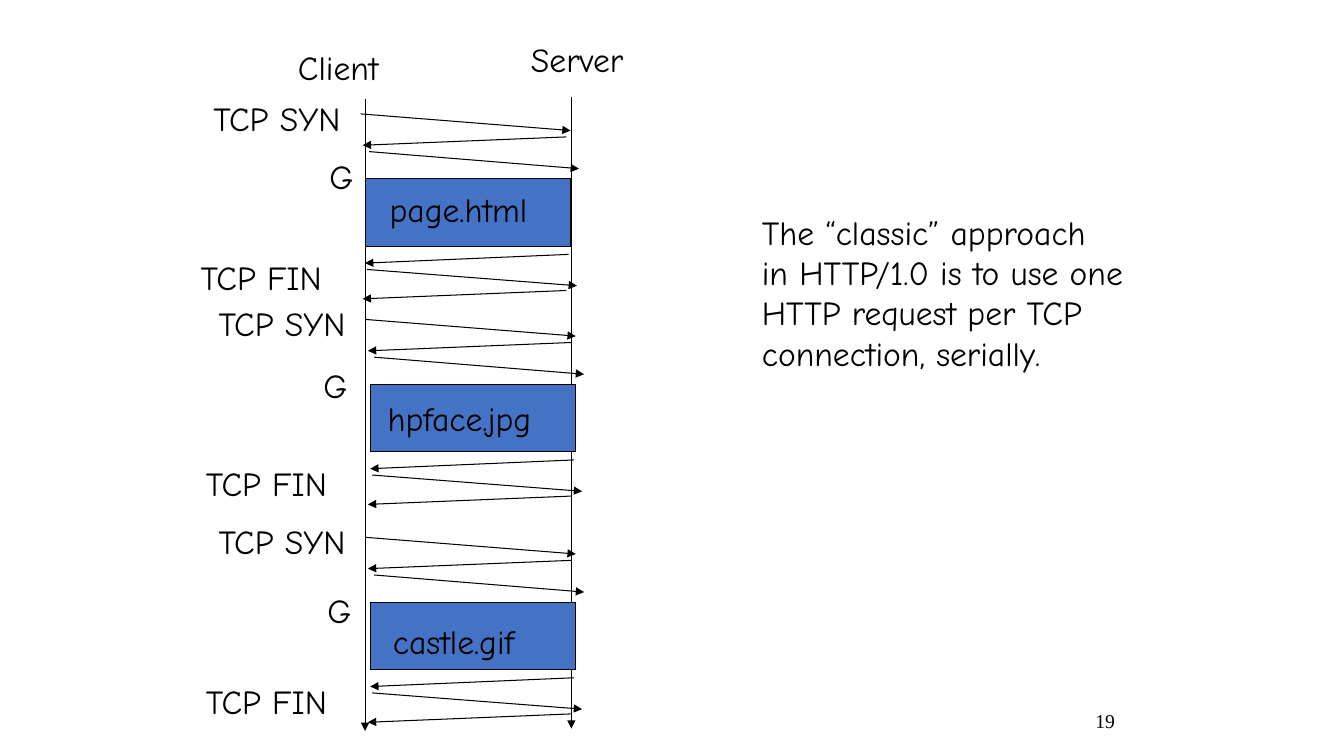
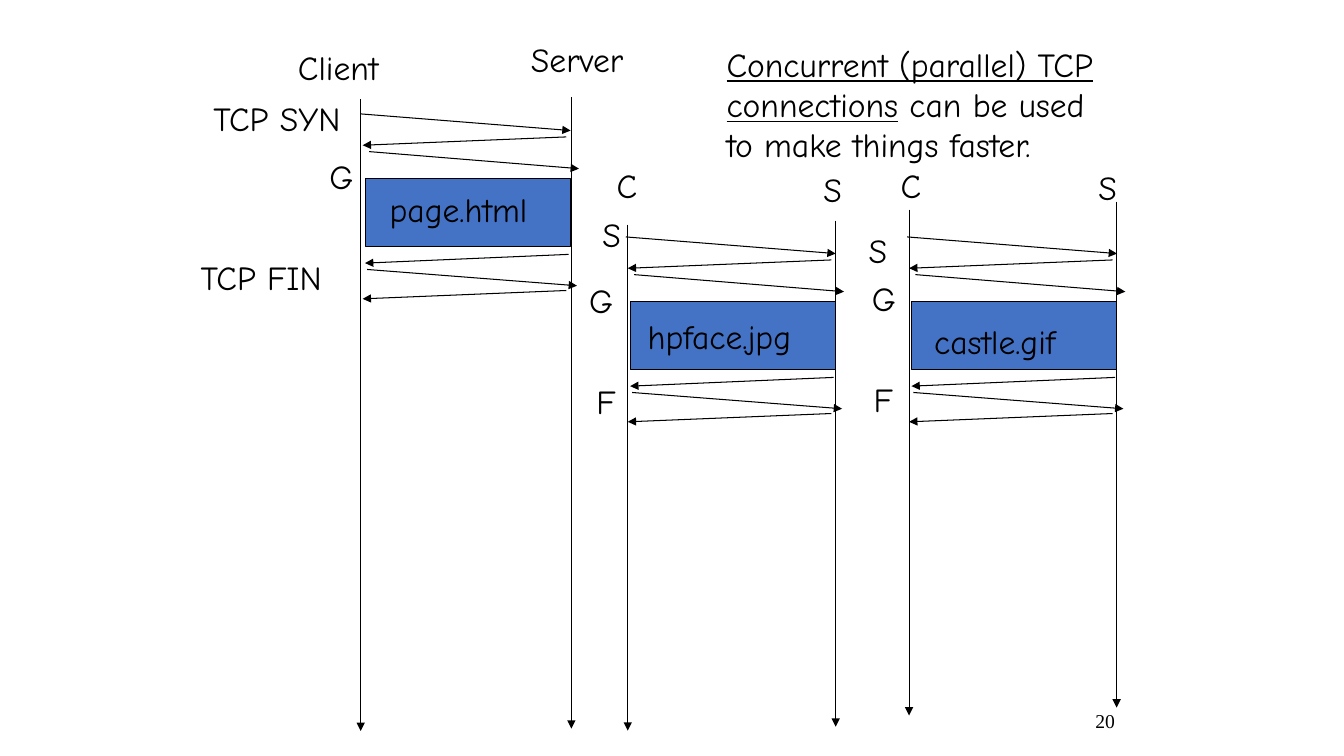
from lxml.etree import SubElement
from pptx import Presentation
from pptx.dml.color import RGBColor
from pptx.enum.shapes import MSO_CONNECTOR, MSO_SHAPE
from pptx.enum.text import MSO_ANCHOR, PP_ALIGN
from pptx.oxml.ns import qn
from pptx.util import Cm, Pt

BLACK = RGBColor(0x00, 0x00, 0x00)
BLUE = RGBColor(0x44, 0x72, 0xC4)
TEXT_FONT = "Comic Neue"
NUMBER_FONT = "Times New Roman"
LABEL_HEIGHT = 1.28
LABEL_WIDTHS = {
    "Client": 2.82, "Server": 3.28, "TCP SYN": 4.11, "TCP FIN": 3.99,
    "G": 1.12, "S": 1.12, "C": 1.04, "F": 1.04,
}
OPENING_ARROWS = [
    (0, 0, 5.29, 0.42), (5.18, 0.58, 0.05, 0.79), (0.21, 0.95, 5.5, 1.38),
]
CLOSING_ARROWS = [
    (5.24, 3.54, 0.11, 3.76), (0.16, 3.92, 5.45, 4.33), (5.18, 4.45, 0.05, 4.66),
]
TRANSFER_BOX = (0.11, 1.64, 5.18, 1.7)
FILE_INSETS = {
    "page.html": (0.62, 0.24), "hpface.jpg": (0.44, 0.34), "castle.gif": (0.57, 0.47),
}
SYN_LABEL = ("TCP SYN", -3.96, -0.53)
FIN_LABEL = ("TCP FIN", -4.28, 3.49)


def style_text(text_frame, size=24, font=TEXT_FONT, align=PP_ALIGN.LEFT):
    for para in text_frame.paragraphs:
        para.alignment = align
        for span in para.runs:
            span.font.size = Pt(size)
            span.font.name = font
            span.font.color.rgb = BLACK


def add_text(page, text, left, top, width, height):
    box = page.shapes.add_textbox(Cm(left), Cm(top), Cm(width), Cm(height))
    box.text_frame.text = text
    box.text_frame.word_wrap = False
    style_text(box.text_frame)
    return box


def add_label(page, text, left, top):
    add_text(page, text, left, top, LABEL_WIDTHS[text], LABEL_HEIGHT)


def add_arrow(page, start_x, start_y, end_x, end_y):
    arrow = page.shapes.add_connector(
        MSO_CONNECTOR.STRAIGHT, Cm(start_x), Cm(start_y), Cm(end_x), Cm(end_y))
    arrow.line.color.rgb = BLACK
    arrow.line.width = Pt(0.75)
    SubElement(arrow.line._get_or_add_ln(), qn("a:tailEnd"), type="triangle")
    SubElement(arrow._element.spPr, qn("a:effectLst"))


def add_transfer(page, file_name, left, top):
    box_left, box_top, width, height = TRANSFER_BOX
    box = page.shapes.add_shape(
        MSO_SHAPE.RECTANGLE, Cm(left + box_left), Cm(top + box_top), Cm(width), Cm(height))
    box.shadow.inherit = False
    box.fill.solid()
    box.fill.fore_color.rgb = BLUE
    box.line.color.rgb = BLACK
    box.line.width = Pt(0.75)
    frame = box.text_frame
    frame.text = file_name
    frame.vertical_anchor = MSO_ANCHOR.TOP
    inset_left, inset_top = FILE_INSETS[file_name]
    frame.margin_left, frame.margin_top = Cm(inset_left), Cm(inset_top)
    frame.margin_right = frame.margin_bottom = Cm(0)
    style_text(frame)


def add_exchange(page, file_name, left, top, labels):
    for start_x, start_y, end_x, end_y in OPENING_ARROWS + CLOSING_ARROWS:
        add_arrow(page, left + start_x, top + start_y, left + end_x, top + end_y)
    add_transfer(page, file_name, left, top)
    for text, label_x, label_y in labels:
        add_label(page, text, left + label_x, top + label_y)


def add_page_number(page, number):
    box = add_text(page, str(number), 22.43, 17.65, 5.92, 1.02)
    box.text_frame.word_wrap = True
    box.text_frame.vertical_anchor = MSO_ANCHOR.MIDDLE
    style_text(box.text_frame, 14, NUMBER_FONT, PP_ALIGN.RIGHT)


def add_base_page(deck, number, client_x):
    page = deck.slides.add_slide(deck.slide_layouts[6])
    add_page_number(page, number)
    add_arrow(page, client_x, 2.49, client_x, 18.42)
    add_arrow(page, 14.4, 2.44, 14.4, 18.36)
    add_label(page, "Client", 7.26, 1.07)
    add_label(page, "Server", 13.13, 0.86)
    add_exchange(page, "page.html", 9.09, 2.87, [SYN_LABEL, FIN_LABEL, ("G", -1.04, 0.94)])
    return page


def add_serial_page(deck):
    page = add_base_page(deck, 19, 9.2)
    add_text(
        page,
        "The “classic” approach\nin HTTP/1.0 is to use one\n"
        "HTTP request per TCP\nconnection, serially.",
        18.95, 5.21, 10.49, 4.37)
    add_exchange(page, "hpface.jpg", 9.22, 8.05, [SYN_LABEL, FIN_LABEL, ("G", -1.32, 1.02)])
    add_exchange(page, "castle.gif", 9.22, 13.54, [SYN_LABEL, FIN_LABEL, ("G", -1.22, 1.19)])


def add_parallel_note(page):
    note = add_text(
        page, "Concurrent (parallel) TCP\nconnections\nto make things faster.",
        18.06, 0.97, 10.54, 3.33)
    paragraphs = note.text_frame.paragraphs
    for para in paragraphs[:2]:
        para.runs[0].font.underline = True
    paragraphs[1].add_run().text = " can be used"
    style_text(note.text_frame)


def add_parallel_page(deck):
    page = add_base_page(deck, 20, 9.09)
    add_parallel_note(page)
    for text, label_x, label_y, line_x, line_top in [
        ("C", 15.29, 4.04, 15.82, 5.66), ("S", 20.5, 4.14, 21.06, 5.56),
        ("C", 22.45, 4.04, 22.91, 5.28), ("S", 27.43, 4.09, 28.14, 5.08),
    ]:
        add_label(page, text, label_x, label_y)
        add_arrow(page, line_x, line_top, line_x, line_top + 12.75)
    add_exchange(page, "hpface.jpg", 15.77, 5.97,
                 [("S", -0.84, -0.71), ("G", -1.17, 0.97), ("F", -0.99, 3.51)])
    add_exchange(page, "castle.gif", 22.86, 5.97,
                 [("S", -1.22, -0.3), ("G", -1.14, 0.91), ("F", -1.09, 3.45)])


def main():
    deck = Presentation()
    deck.slide_width, deck.slide_height = Cm(33.87), Cm(19.05)
    add_serial_page(deck)
    add_parallel_page(deck)
    deck.save("out.pptx")


if __name__ == "__main__":
    main()
